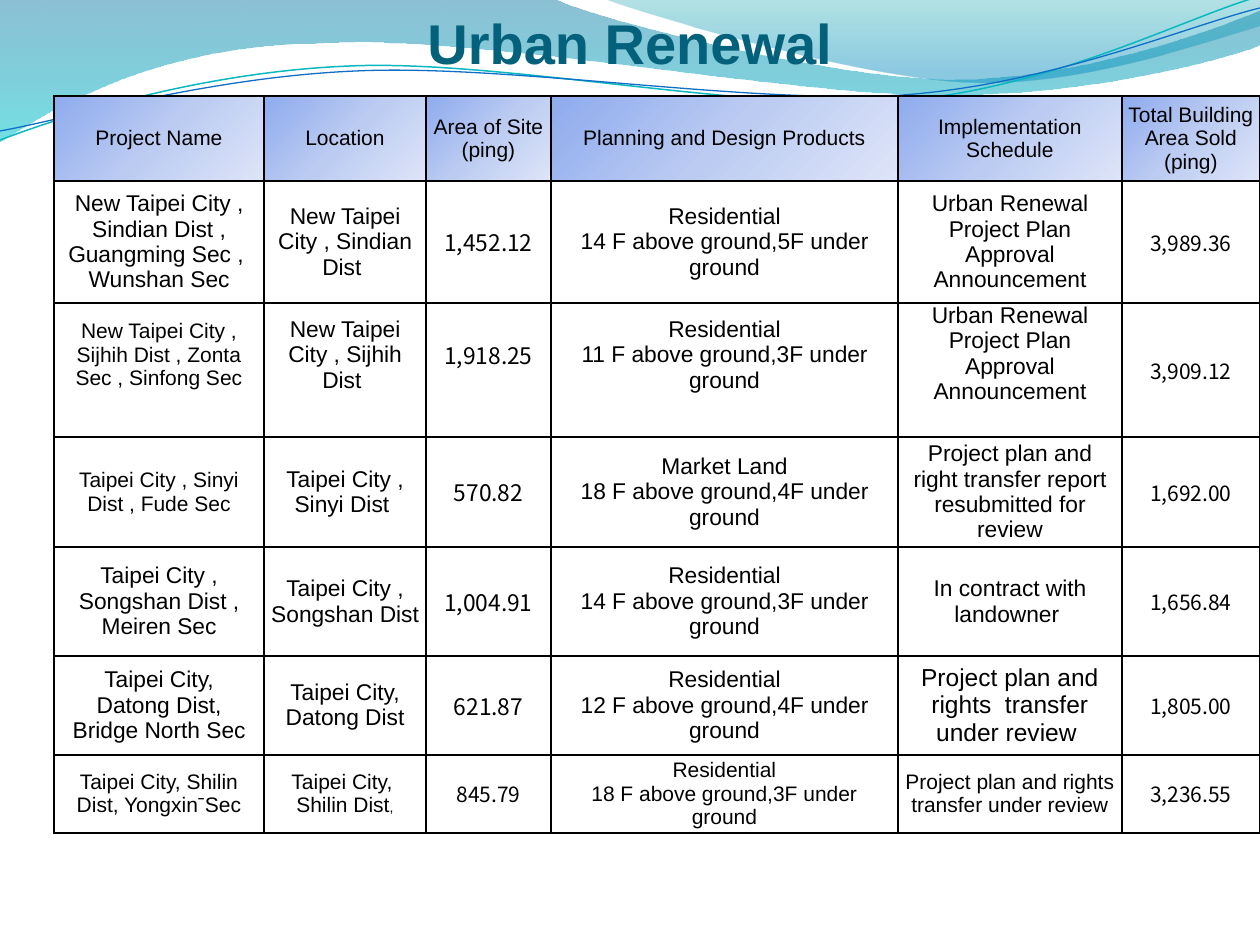
from dataclasses import dataclass
from typing import NamedTuple

from lxml.etree import SubElement
from pptx import Presentation
from pptx.dml.color import RGBColor
from pptx.enum.text import MSO_ANCHOR, PP_ALIGN
from pptx.oxml import parse_xml
from pptx.oxml.ns import nsdecls, qn
from pptx.util import Emu, Pt

PX = 914400 / 126
BLACK = RGBColor(0x00, 0x00, 0x00)
TITLE = RGBColor(0x04, 0x61, 0x7B)
TEAL = RGBColor(0x0A, 0xB8, 0xBF)
BLUE = RGBColor(0x0F, 0x6F, 0xC6)
SANS = "Arial"
DIGITS = "Noto Sans CJK SC"
NUMBER_COLUMNS = (2, 5)
SCHEDULE, SOLD = 4, 5


class Stop(NamedTuple):
    pos: int
    color: RGBColor
    alpha: int = 100


@dataclass
class Wave:
    start: tuple
    segments: list
    stops: tuple = ()
    angle: int = 90
    line: RGBColor | None = None
    width: float = 0


@dataclass
class Row:
    height: int
    sizes: tuple
    texts: tuple
    bottom: int = 0


HEADER_STOPS = (
    Stop(0, RGBColor(0x8E, 0xAB, 0xEE)),
    Stop(50, RGBColor(0xBB, 0xCB, 0xF2)),
    Stop(100, RGBColor(0xDE, 0xE5, 0xF8)),
)

WAVES = [
    Wave((0, -1), [(554, -1), (600, 21, 837, 79, 955, 79), (1075, 79, 1207, 33, 1260, 11),
                   (1261, 45), (1239, 55, 1096, 96, 940, 95), (783, 95, 481, 35, 324, 43),
                   (161, 44, 58, 105, -1, 142), (0, -1)],
         (Stop(0, RGBColor(0x00, 0x74, 0xA1), 45), Stop(100, RGBColor(0x00, 0xC6, 0xCF), 55))),
    Wave((604, -1), [(641, 14, 859, 78, 969, 82), (1079, 87, 1211, 40, 1260, 26), (1260, 0),
                     (604, -1)],
         (Stop(0, RGBColor(0x00, 0xA1, 0xA9), 30), Stop(80, RGBColor(0x00, 0x8B, 0xBF), 45))),
    Wave((0, 140), [(60, 117, 199, 72, 349, 66), (498, 59, 747, 112, 898, 101),
                    (1050, 89, 1182, 19, 1257, -3)], line=TEAL, width=0.85),
    Wave((0, 131), [(59, 121, 207, 77, 357, 71), (508, 64, 752, 105, 903, 95),
                    (1053, 84, 1187, 26, 1260, 8)], line=BLUE, width=0.75),
]

COLUMNS = (210, 162, 125, 347, 224, 138)
SMALL = (12,) * 6
LARGE = (13,) * 5 + (12,)
SMALL_NAME = (12,) + LARGE[1:]
APPROVAL = "Urban Renewal Project Plan Approval Announcement"
UNDER_REVIEW = "Project plan and rights  transfer under review "

ROWS = [
    Row(85, SMALL, ("Project Name", "Location", "Area of Site\n(ping)",
                    "Planning and Design Products", "Implementation Schedule",
                    "Total Building Area Sold\n(ping)")),
    Row(122, LARGE, ("New Taipei City , Sindian Dist , Guangming Sec , \nWunshan Sec",
                     "New Taipei City , Sindian Dist ", "1,452.12",
                     "Residential\n14 F above ground,5F under ground", APPROVAL, "3,989.36")),
    Row(134, SMALL_NAME, ("New Taipei City , Sijhih Dist , Zonta Sec , Sinfong Sec",
                          "New Taipei City , Sijhih Dist ", "1,918.25",
                          "Residential\n11 F above ground,3F under ground", APPROVAL,
                          "3,909.12"), bottom=30),
    Row(110, SMALL_NAME, ("Taipei City , Sinyi Dist , Fude Sec", "Taipei City , Sinyi Dist ",
                          "570.82", "Market Land\n18 F above ground,4F under ground",
                          "Project plan and right transfer report resubmitted for review",
                          "1,692.00")),
    Row(109, LARGE, ("Taipei City , Songshan Dist , Meiren Sec", "Taipei City , Songshan Dist ",
                     "1,004.91", "Residential\n14 F above ground,3F under ground",
                     "In contract with landowner ", "1,656.84")),
    Row(99, (13, 13, 13, 13, 14, 12),
        ("Taipei City,\nDatong Dist,\nBridge North Sec", "Taipei City,\nDatong Dist", "621.87",
         "Residential\n12 F above ground,4F under ground", UNDER_REVIEW, "1,805.00")),
    Row(78, SMALL, ("Taipei City, Shilin Dist, YongxinˉSec", "Taipei City, \nShilin Dist",
                    "845.79", "Residential\n18 F above ground,3F under ground", UNDER_REVIEW,
                    "3,236.55")),
]


def px(value: int) -> Emu:
    return Emu(round(value * PX))


def set_gradient(fill, parent, stops: tuple, angle: int) -> None:
    fill.background()
    items = "".join(
        f'<a:gs pos="{s.pos * 1000}"><a:srgbClr val="{s.color}">'
        f'<a:alpha val="{s.alpha * 1000}"/></a:srgbClr></a:gs>' for s in stops)
    grad = parse_xml(f'<a:gradFill {nsdecls("a")}><a:gsLst>{items}</a:gsLst>'
                     f'<a:lin ang="{angle * 60000}" scaled="0"/></a:gradFill>')
    parent.replace(parent.find(qn("a:noFill")), grad)


def bend_segments(sp, segments: list) -> None:
    lines = iter(list(sp._element.spPr.iter(qn("a:lnTo"))))
    for seg in segments:
        first, *rest = [next(lines) for _ in range(len(seg) // 2)]
        if not rest:
            continue
        curve = parse_xml(f'<a:cubicBezTo {nsdecls("a")}/>')
        first.addprevious(curve)
        for line in (first, *rest):
            curve.append(line[0])
            line.getparent().remove(line)


def draw_wave(s, wave: Wave) -> None:
    points = [(px(x), px(y)) for seg in wave.segments for x, y in zip(seg[::2], seg[1::2])]
    builder = s.shapes.build_freeform(px(wave.start[0]), px(wave.start[1]))
    builder.add_line_segments(points, close=bool(wave.stops))
    sp = builder.convert_to_shape()
    bend_segments(sp, wave.segments)
    sp.shadow.inherit = False
    if wave.stops:
        set_gradient(sp.fill, sp._element.spPr, wave.stops, wave.angle)
        sp.line.fill.background()
    else:
        sp.fill.background()
        sp.line.color.rgb = wave.line
        sp.line.width = Pt(wave.width)


def format_run(r, size: int, font: str, color: RGBColor, bold: bool = False) -> None:
    r.font.size, r.font.name, r.font.bold = Pt(size), font, bold
    r.font.color.rgb = color


def format_text(tf, size: int, font: str, color: RGBColor, bold: bool = False) -> None:
    for p in tf.paragraphs:
        p.alignment = PP_ALIGN.CENTER
        for r in p.runs:
            format_run(r, size, font, color, bold)


def draw_title(s, text: str) -> None:
    tf = s.shapes.add_textbox(px(63), px(0), px(1134), px(76)).text_frame
    tf.word_wrap = True
    tf.vertical_anchor = MSO_ANCHOR.BOTTOM
    tf.margin_left = tf.margin_right = tf.margin_bottom = 0
    tf.margin_top = px(6)
    tf.text = text
    format_text(tf, 32, SANS, TITLE, bold=True)


def set_borders(cell) -> None:
    tc_pr = cell._tc.get_or_add_tcPr()
    for side in ("lnL", "lnR", "lnT", "lnB"):
        ln = SubElement(tc_pr, qn(f"a:{side}"), w=str(Pt(1)))
        SubElement(SubElement(ln, qn("a:solidFill")), qn("a:srgbClr"), val=str(BLACK))


def draw_table(s):
    table = s.shapes.add_table(len(ROWS), len(COLUMNS), px(54), px(96), px(sum(COLUMNS)),
                               px(sum(row.height for row in ROWS))).table
    for column, width in zip(table.columns, COLUMNS):
        column.width = px(width)
    for i, row in enumerate(ROWS):
        table.rows[i].height = px(row.height)
        for j, (text, size) in enumerate(zip(row.texts, row.sizes)):
            cell = table.cell(i, j)
            at_top = row.bottom and j == SCHEDULE
            cell.vertical_anchor = MSO_ANCHOR.TOP if at_top else MSO_ANCHOR.MIDDLE
            cell.margin_left = cell.margin_right = px(6)
            cell.margin_top = 0
            cell.margin_bottom = px(row.bottom if j < SCHEDULE else 0)
            cell.text_frame.text = text
            font = DIGITS if i and j in NUMBER_COLUMNS else SANS
            format_text(cell.text_frame, size, font, BLACK)
            set_borders(cell)
            if i:
                cell.fill.background()
            else:
                set_gradient(cell.fill, cell._tc.tcPr, HEADER_STOPS, 45)
    return table


def main() -> None:
    prs = Presentation()
    prs.slide_width, prs.slide_height = px(1260), px(945)
    s = prs.slides.add_slide(prs.slide_layouts[6])
    for wave in WAVES:
        draw_wave(s, wave)
    draw_title(s, "Urban Renewal")
    table = draw_table(s)
    r = table.cell(len(ROWS) - 1, 1).text_frame.paragraphs[-1].add_run()
    r.text = ","
    format_run(r, 8, SANS, BLACK)
    prs.save("out.pptx")


if __name__ == "__main__":
    main()
